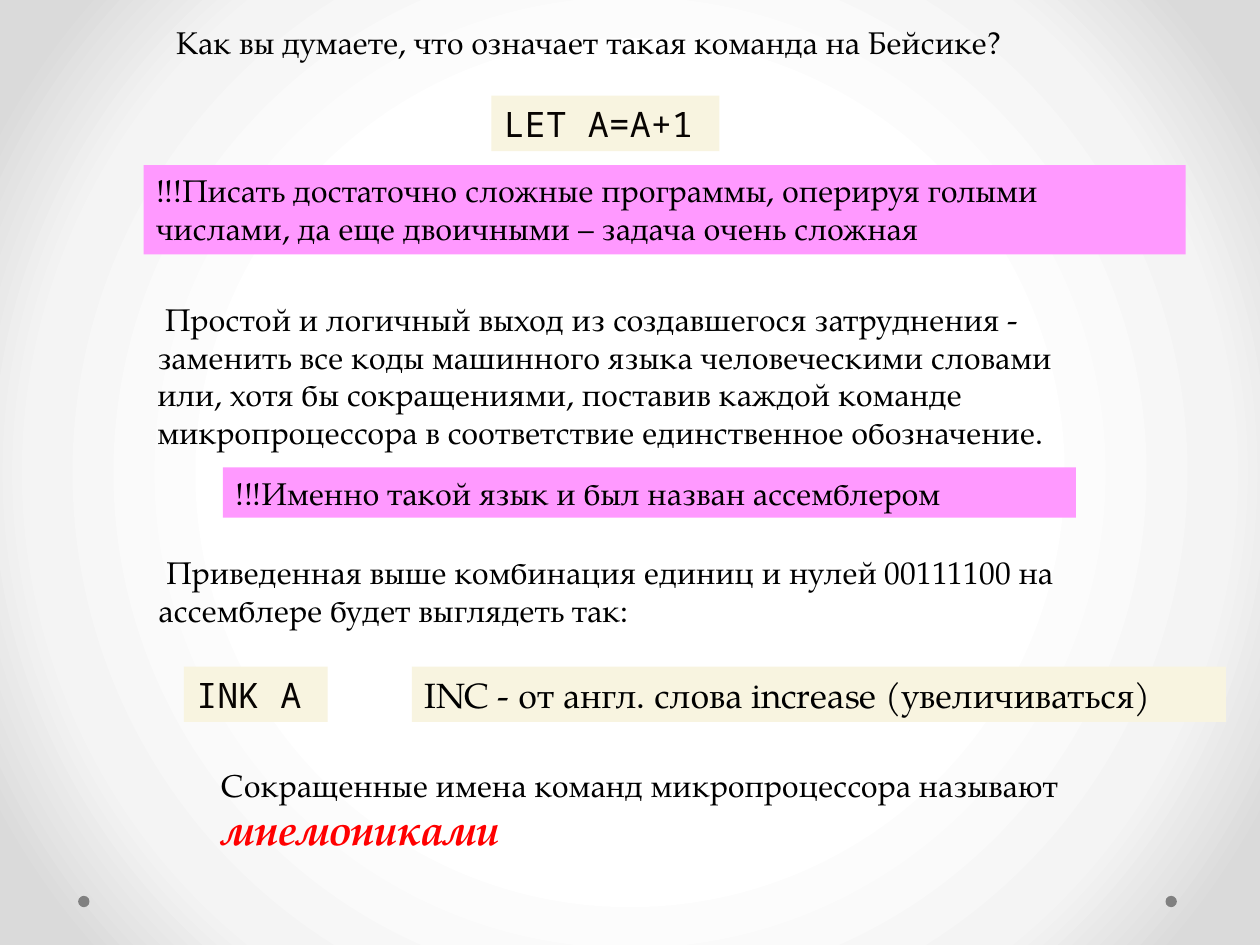
import dataclasses
import typing

import lxml.etree
import pptx
import pptx.dml.color
import pptx.enum.shapes
import pptx.enum.text
import pptx.oxml
import pptx.oxml.ns
import pptx.slide
import pptx.text.text
import pptx.util

RGBColor = pptx.dml.color.RGBColor
BLACK = RGBColor(0x00, 0x00, 0x00)
CODE_INK = RGBColor(0x08, 0x04, 0x02)
RED = RGBColor(0xFF, 0x00, 0x00)
PINK = RGBColor(0xFF, 0x99, 0xFF)
CREAM = RGBColor(0xF8, 0xF4, 0xE0)
GRAY = RGBColor(0x80, 0x80, 0x80)
BACKGROUND_STOPS = (
    (50, RGBColor(0xFF, 0xFF, 0xFF)),
    (76, RGBColor(0xF4, 0xF4, 0xF4)),
    (92, RGBColor(0xDA, 0xDA, 0xDA)),
)

SERIF = "TeX Gyre Pagella"
MONO = "Noto Sans Mono"
SLIDE_WIDTH = pptx.util.Inches(10)
SLIDE_HEIGHT = pptx.util.Inches(7.5)
COLUMNS, ROWS = 100, 75
DOT_SIZE, DOT_ROW = 0.9, 71.1
DOT_COLUMNS = (6.2, 92.5)


@dataclasses.dataclass(frozen=True)
class Box:
    """A block of text placed in grid columns and rows."""

    text: str
    left: float
    top: float
    width: float
    height: float
    fill: typing.Optional[RGBColor] = None
    font: str = SERIF
    size: int = 18
    color: RGBColor = BLACK
    middle: bool = False
    emphasis: str = ""


BOXES = (
    Box("LET A=A+1", 39, 7.6, 18.1, 4.4, CREAM, MONO, 20, CODE_INK, True),
    Box("Как вы думаете, что означает такая команда на Бейсике?", 13, 1.3, 81.1, 4),
    Box(
        "!!!Писать достаточно сложные программы, оперируя голыми числами, "
        "да еще двоичными – задача очень сложная",
        11.4, 13.1, 82.7, 7.1, PINK,
    ),
    Box(
        " Простой и логичный выход из создавшегося затруднения - заменить "
        "все коды машинного языка человеческими словами или, хотя бы "
        "сокращениями, поставив каждой команде микропроцессора в "
        "соответствие единственное обозначение.",
        11.5, 23.3, 78, 13.1,
    ),
    Box("!!!Именно такой язык и был назван ассемблером", 17.7, 37.1, 67.7, 4, PINK),
    Box(
        " Приведенная выше комбинация единиц и нулей 00111100 на "
        "ассемблере будет выглядеть так:",
        11.6, 43.4, 74.7, 7.1,
    ),
    Box(
        "INC - от англ. слова increase (увеличиваться)",
        32.7, 52.9, 64.6, 4.4, CREAM, size=20, middle=True,
    ),
    Box("INK A", 14.6, 52.9, 11.4, 4.4, CREAM, MONO, 20, CODE_INK, True),
    Box(
        "Cокращенные имена команд микропроцессора называют ",
        16.6, 60.3, 68.8, 8.1, emphasis="мнемониками",
    ),
)


def across(columns: float) -> int:
    """Return the length of a number of grid columns."""
    return round(SLIDE_WIDTH * columns / COLUMNS)


def down(rows: float) -> int:
    """Return the length of a number of grid rows."""
    return round(SLIDE_HEIGHT * rows / ROWS)


def add_text(
    paragraph: pptx.text.text._Paragraph,
    text: str,
    *,
    font: str = SERIF,
    size: int = 18,
    color: RGBColor = BLACK,
    bold: bool = False,
    italic: bool = False,
) -> None:
    """Append formatted text to a paragraph."""
    run = paragraph.add_run()
    run.text = text
    run.font.name = font
    run.font.size = pptx.util.Pt(size)
    run.font.color.rgb = color
    run.font.bold = bold
    run.font.italic = italic


def draw_background(slide: pptx.slide.Slide) -> None:
    """Fill the slide with a gradient that darkens away from the centre."""
    fill = slide.background.fill
    fill.gradient()
    gradient = slide.element.find(".//" + pptx.oxml.ns.qn("p:bgPr"))[0]
    for child in list(gradient):
        gradient.remove(child)
    stop_list = lxml.etree.SubElement(gradient, pptx.oxml.ns.qn("a:gsLst"))
    for position, color in BACKGROUND_STOPS:
        stop = lxml.etree.SubElement(
            stop_list, pptx.oxml.ns.qn("a:gs"), pos=str(position * 1000)
        )
        lxml.etree.SubElement(stop, pptx.oxml.ns.qn("a:srgbClr"), val=str(color))
    shade = lxml.etree.SubElement(gradient, pptx.oxml.ns.qn("a:path"), path="circle")
    centre = dict.fromkeys("ltrb", "50000")
    lxml.etree.SubElement(shade, pptx.oxml.ns.qn("a:fillToRect"), centre)


def draw_dot(slide: pptx.slide.Slide, column: float) -> None:
    """Draw a small gray dot near the bottom of the slide."""
    dot = slide.shapes.add_shape(
        pptx.enum.shapes.MSO_SHAPE.OVAL,
        across(column), down(DOT_ROW), across(DOT_SIZE), down(DOT_SIZE),
    )
    dot.shadow.inherit = False
    dot.fill.solid()
    dot.fill.fore_color.rgb = GRAY
    dot.line.fill.background()


def draw_box(slide: pptx.slide.Slide, box: Box) -> None:
    """Draw a text block, on a coloured rectangle if it has a fill."""
    place = across(box.left), down(box.top), across(box.width), down(box.height)
    if box.fill is None:
        shape = slide.shapes.add_textbox(*place)
    else:
        shape = slide.shapes.add_shape(pptx.enum.shapes.MSO_SHAPE.RECTANGLE, *place)
        shape.shadow.inherit = False
        shape.fill.solid()
        shape.fill.fore_color.rgb = box.fill
        shape.line.fill.background()
    anchors = pptx.enum.text.MSO_ANCHOR
    frame = shape.text_frame
    frame.word_wrap = True
    frame.vertical_anchor = anchors.MIDDLE if box.middle else anchors.TOP
    paragraph = frame.paragraphs[0]
    paragraph.alignment = pptx.enum.text.PP_ALIGN.LEFT
    add_text(paragraph, box.text, font=box.font, size=box.size, color=box.color)
    if box.emphasis:
        add_text(paragraph, box.emphasis, size=24, color=RED, bold=True, italic=True)


def main() -> None:
    """Build the slide about assembler mnemonics."""
    presentation = pptx.Presentation()
    presentation.slide_width = SLIDE_WIDTH
    presentation.slide_height = SLIDE_HEIGHT
    slide = presentation.slides.add_slide(presentation.slide_layouts[6])
    draw_background(slide)
    for column in DOT_COLUMNS:
        draw_dot(slide, column)
    for box in BOXES:
        draw_box(slide, box)
    presentation.save("out.pptx")


if __name__ == "__main__":
    main()
